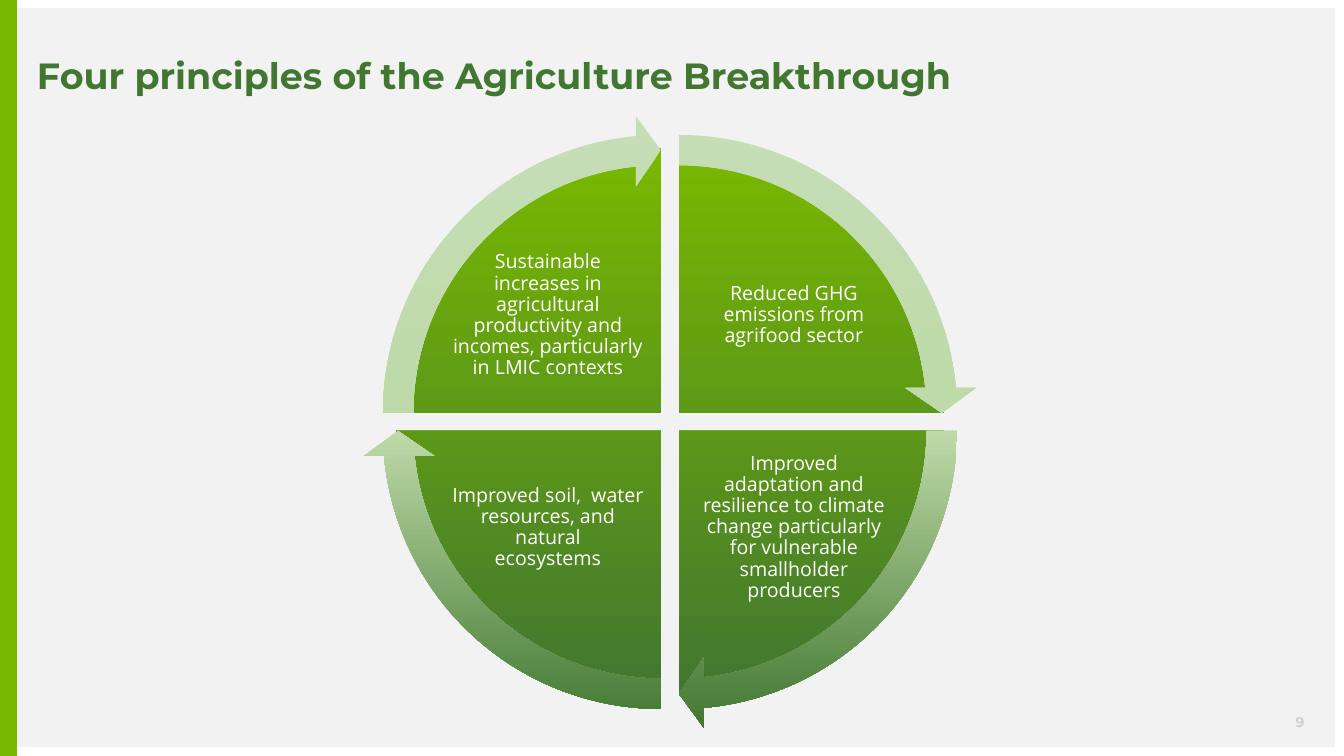
from copy import deepcopy
from dataclasses import dataclass

from pptx import Presentation
from pptx.dml.color import RGBColor
from pptx.enum.shapes import MSO_SHAPE
from pptx.enum.text import MSO_ANCHOR, MSO_AUTO_SIZE, PP_ALIGN
from pptx.oxml.ns import qn
from pptx.shapes.autoshape import Shape
from pptx.slide import Slide
from pptx.util import Emu, Pt

EMU_PER_PX = 914400 / 100.8

WHITE = RGBColor(0xFF, 0xFF, 0xFF)
PANEL_GREY = RGBColor(0xF2, 0xF2, 0xF2)
NUMBER_GREY = RGBColor(0xD0, 0xD0, 0xD0)
LIME = RGBColor(0x79, 0xB8, 0x00)
FOREST = RGBColor(0x41, 0x77, 0x30)
PALE_GREEN = RGBColor(0xC6, 0xDE, 0xB6)
SOFT_GREEN = RGBColor(0xBE, 0xDA, 0xA9)

WEDGE_STOPS = [(0, LIME), (1, FOREST)]
ARROW_STOPS = [(0, PALE_GREEN), (0.5, SOFT_GREEN), (1, FOREST)]

# Geometry of the wheel, in px
WEDGE_LEFT, WEDGE_TOP, WEDGE_SIZE = 396, 148, 530
QUADRANT_GAP = 18
ARROW_MARGIN = 33
LABEL_LEFT, LABEL_TOP, LABEL_WIDTH, LABEL_HEIGHT = 450, 258, 196, 145
LABEL_STEP_X, LABEL_STEP_Y = 246, 182
LABEL_INSET, LABEL_SHIFT = 2, 30

# Angles in the units of the shape adjustments
QUARTER, FULL_TURN = 54, 216
ARROW_SWEEP = 50.725


@dataclass(frozen=True)
class Principle:
    text: str
    column: int
    row: int
    start: int

    @property
    def wedge_left(self) -> int:
        return WEDGE_LEFT + self.column * QUADRANT_GAP

    @property
    def wedge_top(self) -> int:
        return WEDGE_TOP + self.row * QUADRANT_GAP


# Clockwise from the upper right
PRINCIPLES = [
    Principle("Reduced GHG emissions from agrifood sector", 1, 0, 162),
    Principle("Improved adaptation and resilience to climate change "
              "particularly for vulnerable smallholder producers", 1, 1, 0),
    Principle("Improved soil,  water resources, and natural\vecosystems", 0, 1, 54),
    Principle("Sustainable increases in agricultural productivity and incomes, "
              "particularly in LMIC contexts", 0, 0, 108),
]


def px(length: int) -> Emu:
    return Emu(round(length * EMU_PER_PX))


def write(shape: Shape, text: str, *, size: int, color: RGBColor, font: str,
          bold: bool = False, align: PP_ALIGN = PP_ALIGN.CENTER,
          insets: tuple[int, int, int, int] = (0, 0, 0, 0)) -> None:
    """Fill a shape with one paragraph; insets are left, top, right, bottom."""
    frame = shape.text_frame
    frame.word_wrap = True
    frame.auto_size = MSO_AUTO_SIZE.NONE
    frame.vertical_anchor = MSO_ANCHOR.MIDDLE
    (frame.margin_left, frame.margin_top,
     frame.margin_right, frame.margin_bottom) = map(px, insets)
    frame.text = text
    paragraph = frame.paragraphs[0]
    paragraph.alignment = align
    paragraph.line_spacing = 0.9
    for run in paragraph.runs:
        run.font.name = font
        run.font.size = Pt(size)
        run.font.bold = bold
        run.font.color.rgb = color


def add_plain(slide: Slide, kind: MSO_SHAPE, left: int, top: int,
              width: int, height: int) -> Shape:
    shape = slide.shapes.add_shape(kind, px(left), px(top), px(width), px(height))
    shape.shadow.inherit = False
    shape.line.fill.background()
    return shape


def add_block(slide: Slide, left: int, top: int, width: int, height: int,
              color: RGBColor) -> Shape:
    block = add_plain(slide, MSO_SHAPE.RECTANGLE, left, top, width, height)
    block.fill.solid()
    block.fill.fore_color.rgb = color
    return block


def shade(shape: Shape, stops: list[tuple[float, RGBColor]]) -> None:
    """Apply a top-to-bottom gradient."""
    shape.fill.gradient()
    shape.fill.gradient_angle = 270
    stop_list = shape.element.spPr.find(".//" + qn("a:gsLst"))
    while len(stop_list) < len(stops):
        stop_list.append(deepcopy(stop_list[-1]))
    for stop, (position, color) in zip(shape.fill.gradient_stops, stops):
        stop.position = position
        stop.color.rgb = color


def add_round(slide: Slide, kind: MSO_SHAPE, left: int, top: int, size: int,
              adjustments: list[float], stops: list[tuple[float, RGBColor]]) -> None:
    shape = add_plain(slide, kind, left, top, size, size)
    for index, value in enumerate(adjustments):
        shape.adjustments[index] = value
    shade(shape, stops)


def add_wedge(slide: Slide, principle: Principle) -> None:
    end = (principle.start + QUARTER) % FULL_TURN
    add_round(slide, MSO_SHAPE.PIE, principle.wedge_left, principle.wedge_top,
              WEDGE_SIZE, [principle.start, end], WEDGE_STOPS)


def add_label(slide: Slide, principle: Principle) -> None:
    label = slide.shapes.add_textbox(
        px(LABEL_LEFT + principle.column * LABEL_STEP_X),
        px(LABEL_TOP + principle.row * LABEL_STEP_Y),
        px(LABEL_WIDTH), px(LABEL_HEIGHT))
    # The upper labels sit higher in their box, the lower ones lower
    insets = (LABEL_INSET, LABEL_INSET + LABEL_SHIFT * principle.row,
              LABEL_INSET, LABEL_INSET + LABEL_SHIFT * (1 - principle.row))
    write(label, principle.text, size=14, color=WHITE, font="Open Sans", insets=insets)


def add_arrow(slide: Slide, principle: Principle) -> None:
    add_round(slide, MSO_SHAPE.CIRCULAR_ARROW,
              principle.wedge_left - ARROW_MARGIN, principle.wedge_top - ARROW_MARGIN,
              WEDGE_SIZE + 2 * ARROW_MARGIN,
              [0.051, 3.275, principle.start + ARROW_SWEEP, principle.start, 0.059],
              ARROW_STOPS)


def main() -> None:
    deck = Presentation()
    deck.slide_width, deck.slide_height = px(1344), px(756)
    slide = deck.slides.add_slide(deck.slide_layouts[5])

    # Background panel and side stripe
    add_block(slide, 8, 8, 1327, 739, PANEL_GREY)
    stripe = add_block(slide, 0, 0, 17, 756, LIME)

    # Title, in front of the panel
    title = slide.shapes.title
    stripe.element.addnext(title.element)
    title.left, title.top, title.width, title.height = map(px, (37, 57, 964, 42))
    write(title, "Four principles of the Agriculture Breakthrough", size=26,
          color=FOREST, font="Montserrat", bold=True, align=PP_ALIGN.LEFT)

    # Wheel of principles
    for principle in PRINCIPLES:
        add_wedge(slide, principle)
        add_label(slide, principle)
    for principle in PRINCIPLES:
        add_arrow(slide, principle)

    # Page number
    page_number = slide.shapes.add_textbox(px(1280), px(712), px(40), px(22))
    write(page_number, "9", size=10, color=NUMBER_GREY, font="Montserrat", bold=True)

    deck.save("out.pptx")


if __name__ == "__main__":
    main()
